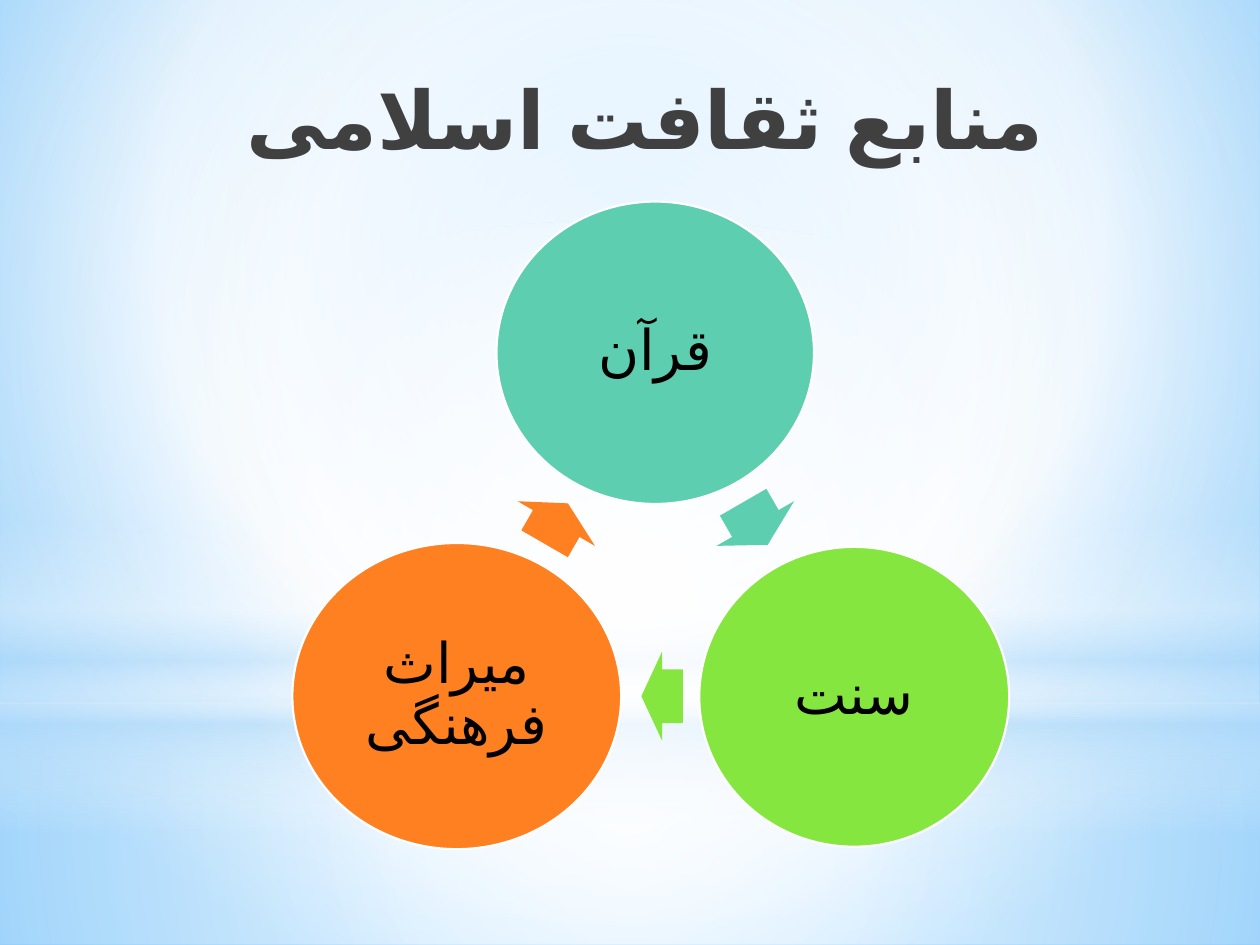
from lxml.etree import SubElement
from pptx import Presentation
from pptx.dml.color import RGBColor
from pptx.enum.shapes import MSO_SHAPE
from pptx.enum.text import MSO_ANCHOR, PP_ALIGN
from pptx.oxml import parse_xml
from pptx.oxml.ns import nsdecls, qn
from pptx.util import Inches, Pt

THEME = {
    "font": "Arial", "title_size": Pt(46), "label_size": Pt(32), "outline": Pt(1.25),
    "white": "FFFFFF", "ink": "000000", "grey": "404040", "navy": "212745",
    "mist": "B4DCFA", "sky": "9ED5FF", "blue": "5BB9FF",
    "teal": "5DCEAF", "green": "86E640", "orange": "FF8021",
}
COLUMNS, ROWS = 100, 75

deck = Presentation()
deck.slide_width, deck.slide_height = Inches(10), Inches(7.5)
page = deck.slides.add_slide(deck.slide_layouts[6])
column, row = deck.slide_width / COLUMNS, deck.slide_height / ROWS


def paint_gradient(fill, element, stops, direction):
    fill.solid()
    marks = "".join(
        f'<a:gs pos="{place * 1000}"><a:srgbClr val="{THEME[name]}">'
        f'<a:alpha val="{opacity * 1000}"/></a:srgbClr></a:gs>'
        for place, name, opacity in stops)
    solid = element.xpath(".//a:solidFill")[0]
    solid.getparent().replace(solid, parse_xml(
        f'<a:gradFill {nsdecls("a")} rotWithShape="1"><a:gsLst>{marks}</a:gsLst>{direction}</a:gradFill>'))


def write_persian(frame, text, size, margin, anchor):
    settings = {"word_wrap": True, "vertical_anchor": anchor, "margin_left": margin,
                "margin_right": margin, "margin_top": margin, "margin_bottom": margin}
    for name, value in settings.items():
        setattr(frame, name, value)
    para = frame.paragraphs[0]
    para.alignment = PP_ALIGN.CENTER
    para._p.get_or_add_pPr().set("rtl", "1")
    span = para.add_run()
    span.text = text
    for name, value in {"name": THEME["font"], "size": size}.items():
        setattr(span.font, name, value)
    properties = span._r.get_or_add_rPr()
    properties.set("lang", "fa-IR")
    SubElement(properties, qn("a:cs")).set("typeface", THEME["font"])
    return para, span


RADIAL = '<a:path path="circle"><a:fillToRect l="{}" t="{}" r="{}" b="{}"/></a:path>'
CENTRED = RADIAL.format(50000, 50000, 50000, 50000)
DOWNWARD = '<a:lin ang="5400000" scaled="0"/>'

paint_gradient(page.background.fill, page.element,
               [(0, "sky", 100), (60, "white", 100), (100, "blue", 100)],
               RADIAL.format(20000, 10000, 20000, 60000))

glows = [
    (MSO_SHAPE.RECTANGLE, 55.8, 19.2, CENTRED,
     [(0, "white", 91), (37, "white", 76), (100, "mist", 79)]),
    (MSO_SHAPE.RECTANGLE, 0, 55.8, CENTRED,
     [(0, "white", 89), (48, "white", 62), (100, "mist", 79)]),
    (MSO_SHAPE.RECTANGLE, 41.2, 25, DOWNWARD,
     [(0, "white", 0), (29, "white", 30), (45, "mist", 40),
      (55, "white", 26), (65, "mist", 60), (100, "white", 0)]),
    (MSO_SHAPE.OVAL, 17.5, 55.8, CENTRED, [(0, "white", 100), (56, "white", 0)]),
]
for kind, top, height, direction, stops in glows:
    glow = page.shapes.add_shape(kind, 0, int(top * row), deck.slide_width, int(height * row))
    glow.shadow.inherit = False
    glow.line.fill.background()
    paint_gradient(glow.fill, glow.element, stops, direction)

title = page.shapes.add_textbox(int(10.8 * column), int(5 * row), int(80.8 * column), int(12.5 * row))
para, span = write_persian(title.text_frame, "منابع ثقافت اسلامی", THEME["title_size"],
                           Inches(0.05), MSO_ANCHOR.TOP)
span.font.bold = True
paint_gradient(span.font.fill, span._r,
               [(0, "ink", 100), (40, "grey", 100), (100, "navy", 65)], DOWNWARD)

sources = [
    ("قرآن", "teal", (39.4, 16, 25.2, 24), (58, 38, 3.9, 7.1), 60),
    ("سنت", "green", (55.5, 43.4, 24.6, 23.8), (50.9, 51.7, 3.3, 7.1), 180),
    ("میراث فرهنگی", "orange", (23.2, 43.1, 26.1, 24.3), (42.3, 38, 3.7, 7.1), 300),
]
for label, colour, circle_cells, arrow_cells, turn in sources:
    for kind, cells in ((MSO_SHAPE.OVAL, circle_cells), (MSO_SHAPE.RIGHT_ARROW, arrow_cells)):
        left, top, width, height = cells
        shape = page.shapes.add_shape(kind, int(left * column), int(top * row),
                                      int(width * column), int(height * row))
        shape.shadow.inherit = False
        shape.fill.solid()
        shape.fill.fore_color.rgb = RGBColor.from_string(THEME[colour])
        if kind == MSO_SHAPE.RIGHT_ARROW:
            shape.line.fill.background()
            shape.rotation = turn
            shape.adjustments[0], shape.adjustments[1] = 0.6, 0.5
        else:
            shape.line.color.rgb = RGBColor.from_string(THEME["white"])
            shape.line.width = THEME["outline"]
            para, span = write_persian(shape.text_frame, label, THEME["label_size"],
                                       Inches(0.04), MSO_ANCHOR.MIDDLE)
            para.line_spacing = 0.9
            span.font.color.rgb = RGBColor.from_string(THEME["ink"])

deck.save("out.pptx")
